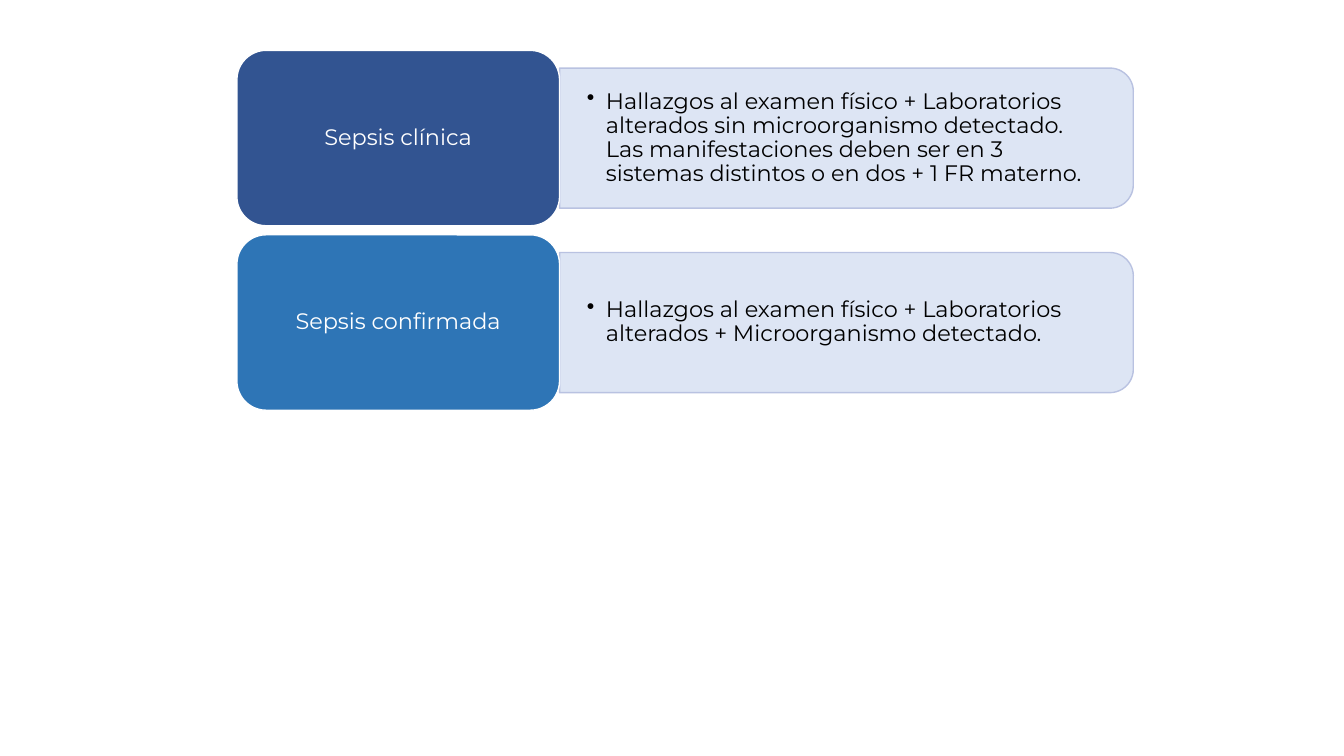
import pptx
import pptx.util
import pptx.dml.color
import pptx.enum.shapes
import pptx.enum.text
import pptx.oxml
from pptx.oxml.ns import nsdecls, qn

Inches, Pt = pptx.util.Inches, pptx.util.Pt
SHAPE = pptx.enum.shapes.MSO_SHAPE
ALIGN = pptx.enum.text.PP_ALIGN


def paint(fill, color):
    fill.solid()
    fill.fore_color.rgb = pptx.dml.color.RGBColor.from_string(color)


def write(s, text, color, align, inset_x, inset_y):
    tf = s.text_frame
    tf.word_wrap = True
    tf.vertical_anchor = pptx.enum.text.MSO_ANCHOR.MIDDLE
    tf.margin_left = tf.margin_right = Inches(inset_x)
    tf.margin_top = tf.margin_bottom = Inches(inset_y)
    p = tf.paragraphs[0]
    p.alignment = align
    p.line_spacing = 0.9
    r = p.add_run()
    r.text = text
    r.font.name = "Montserrat"
    r.font.size = Pt(16)
    paint(r.font.fill, color)
    return p


prs = pptx.Presentation()
prs.slide_width, prs.slide_height = Inches(13.33), Inches(7.5)
slide = prs.slides.add_slide(prs.slide_layouts[6])

rows = [
    ("Sepsis clínica", "325491",
     "Hallazgos al examen físico + Laboratorios alterados sin microorganismo detectado. "
     "Las manifestaciones deben ser en 3 sistemas distintos o en dos + 1 FR materno."),
    ("Sepsis confirmada", "2E75B6",
     "Hallazgos al examen físico + Laboratorios alterados + Microorganismo detectado."),
]
label_left, label_width, label_height = 2.35, 3.2, 1.74
panel_left = label_left + label_width
panel_width, panel_height = 5.69, 1.39
text_width, text_height = 5.62, 1.26
row_top, row_step = 0.5, 1.83

for i, (label, color, description) in enumerate(rows):
    top = row_top + i * row_step
    middle = top + label_height / 2

    # Description panel, turned so its rounded corners face right
    s = slide.shapes.add_shape(
        SHAPE.ROUND_2_SAME_RECTANGLE,
        Inches(panel_left + (panel_width - panel_height) / 2),
        Inches(middle - panel_width / 2),
        Inches(panel_height), Inches(panel_width))
    s.rotation = 90
    s.shadow.inherit = False
    paint(s.fill, "DAE3F3")
    tint = s.fill._xPr.find(qn("a:solidFill"))[0]
    tint.append(pptx.oxml.parse_xml(f'<a:alpha {nsdecls("a")} val="90000"/>'))
    paint(s.line.fill, "B9C2E1")
    s.line.width = Pt(1)

    # Bulleted description
    s = slide.shapes.add_textbox(
        Inches(panel_left), Inches(middle - text_height / 2),
        Inches(text_width), Inches(text_height))
    p = write(s, description, "000000", ALIGN.LEFT, 0.27, 0.14)
    pPr = p._p.get_or_add_pPr()
    pPr.set("marL", str(Inches(0.19)))
    pPr.set("indent", str(-Inches(0.19)))
    pPr.append(pptx.oxml.parse_xml(f'<a:buChar {nsdecls("a")} char="•"/>'))

    # Label
    s = slide.shapes.add_shape(
        SHAPE.ROUNDED_RECTANGLE, Inches(label_left), Inches(top),
        Inches(label_width), Inches(label_height))
    s.shadow.inherit = False
    paint(s.fill, color)
    paint(s.line.fill, "FFFFFF")
    s.line.width = Pt(1)
    write(s, label, "FFFFFF", ALIGN.CENTER, 0.07, 0.03)

prs.save("out.pptx")
